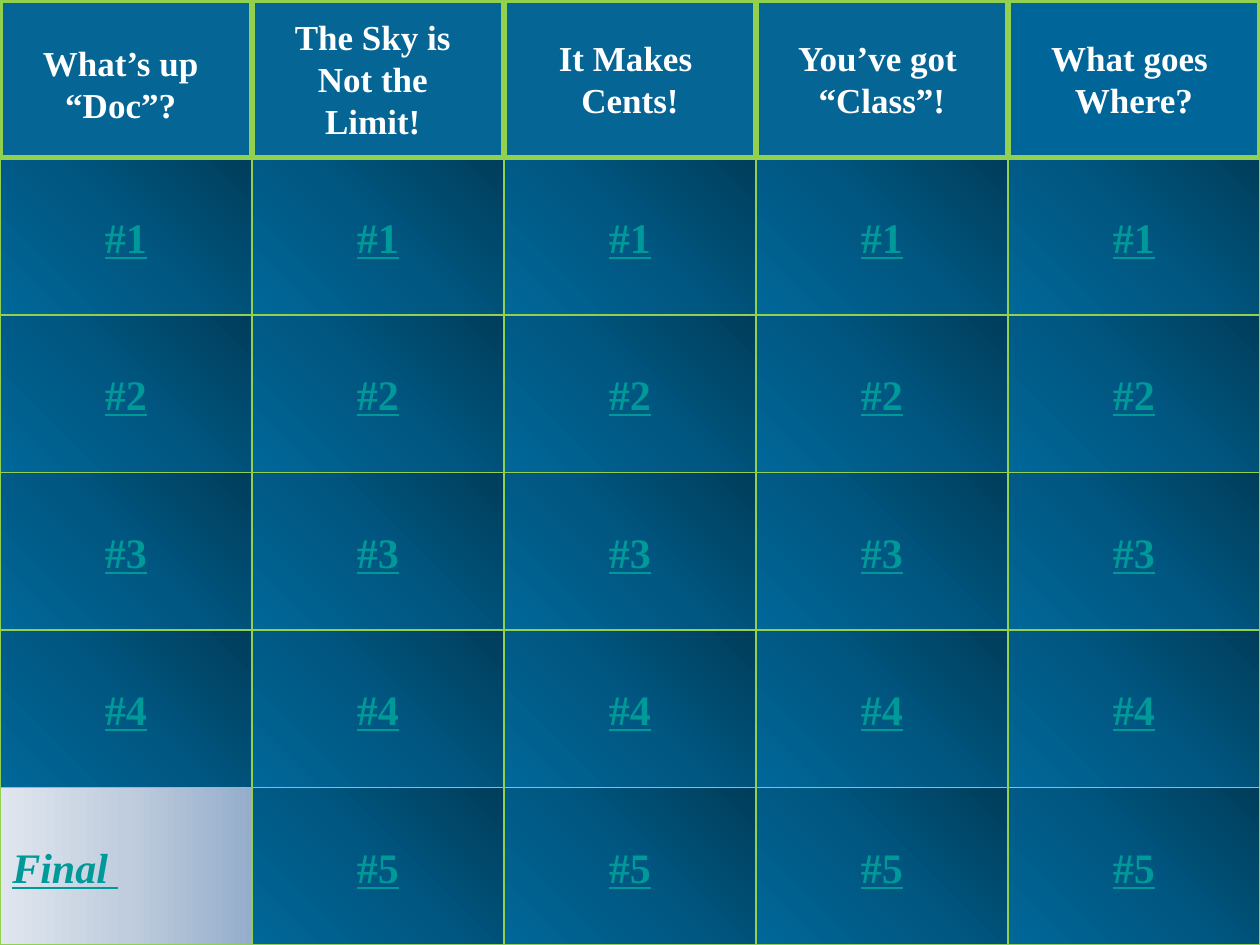
from copy import deepcopy
from dataclasses import dataclass

from pptx import Presentation
from pptx.dml.color import RGBColor
from pptx.enum.shapes import MSO_SHAPE
from pptx.enum.text import MSO_ANCHOR, MSO_AUTO_SIZE, PP_ALIGN
from pptx.oxml.ns import qn
from pptx.util import Pt


@dataclass(frozen=True)
class Theme:
    """Colours, font and sizes of the game board."""
    font: str = "Times New Roman"
    header_size: int = 20
    button_size: int = 24
    white: str = "FFFFFF"
    link: str = "009999"
    border: str = "92D050"
    header_fill: str = "056594"
    last_header_fill: str = "006699"
    button_stops: tuple = ("003D5B", "005781", "006799")
    final_stops: tuple = ("95ADCB", "C0CDDE", "E0E6EE")


THEME = Theme()
COLUMN_WIDTH, ROW_HEIGHT = 144, 90
COLUMNS, ROWS = 5, 5
HEADER_LINES = {2: ("It Makes ", "Cents!"), 3: ("You’ve got ", "“Class”!"), 4: ("What goes ", "Where?")}
HEADER_CAPTIONS = (("What’s up “Doc”?", (0, 20, 138, 55.5)), ("The Sky is Not the Limit!", (150, 5, 126, 80)))


def add_box(page, preset, box, border_width):
    """Add a bordered preset shape in the given box."""
    shape = page.shapes.add_shape(preset, *(Pt(length) for length in box))
    shape.shadow.inherit = False
    shape.line.color.rgb = RGBColor.from_string(THEME.border)
    shape.line.width = Pt(border_width)
    return shape


def fill_gradient(shape, colours, angle):
    """Fill a shape with three evenly spaced colours at a counter-clockwise angle."""
    shape.fill.gradient()
    shape.fill.gradient_angle = angle
    stop_list = next(shape._element.iter(qn("a:gsLst")))
    stop_list.insert(1, deepcopy(stop_list[0]))
    for index, (stop, colour) in enumerate(zip(shape.fill.gradient_stops, colours)):
        stop.position = index / 2
        stop.color.rgb = RGBColor.from_string(colour)


def write_lines(shape, lines, size, colour, align=PP_ALIGN.CENTER, wrap=False, underline=False, italic=False):
    """Write bold lines, one paragraph each, in the middle of a shape."""
    frame = shape.text_frame
    frame.word_wrap = wrap
    frame.vertical_anchor = MSO_ANCHOR.MIDDLE
    for index, line in enumerate(lines):
        para = frame.add_paragraph() if index else frame.paragraphs[0]
        para.alignment = align
        span = para.add_run()
        span.text = line
        span.font.name = THEME.font
        span.font.size = Pt(size)
        span.font.bold = True
        span.font.italic = italic
        span.font.underline = underline
        span.font.color.rgb = RGBColor.from_string(colour)


def add_button(page, box, label):
    """Add one numbered question button."""
    button = add_box(page, MSO_SHAPE.ACTION_BUTTON_CUSTOM, box, 0.75)
    fill_gradient(button, THEME.button_stops, 225)
    write_lines(button, [label], THEME.button_size, THEME.link, underline=True)


def add_final_button(page, box):
    """Add the pale button for the final question."""
    button = add_box(page, MSO_SHAPE.ACTION_BUTTON_CUSTOM, box, 0.75)
    fill_gradient(button, THEME.final_stops, 180)
    write_lines(button, ["Final "], THEME.button_size, THEME.link, PP_ALIGN.LEFT,
                wrap=True, underline=True, italic=True)


def add_question_grid(page, left, top):
    """Add the columns of question buttons from the given corner."""
    for column in range(COLUMNS):
        for row in range(ROWS):
            box = (left + column * COLUMN_WIDTH, top + row * ROW_HEIGHT, COLUMN_WIDTH, ROW_HEIGHT)
            if column == 0 and row == ROWS - 1:
                add_final_button(page, box)
            else:
                add_button(page, box, f"#{row + 1}")


def add_header_row(page, left, top):
    """Add the category panels and their captions from the given corner."""
    for column in range(COLUMNS):
        box = (left + column * COLUMN_WIDTH, top, COLUMN_WIDTH, ROW_HEIGHT)
        panel = add_box(page, MSO_SHAPE.RECTANGLE, box, 3)
        colour = THEME.last_header_fill if column == COLUMNS - 1 else THEME.header_fill
        panel.fill.solid()
        panel.fill.fore_color.rgb = RGBColor.from_string(colour)
        write_lines(panel, HEADER_LINES.get(column, ()), THEME.header_size, THEME.white)
    for caption, (offset_x, offset_y, width, height) in HEADER_CAPTIONS:
        text_box = page.shapes.add_textbox(Pt(left + offset_x), Pt(top + offset_y), Pt(width), Pt(height))
        write_lines(text_box, [caption], THEME.header_size, THEME.white, wrap=True)
        text_box.text_frame.auto_size = MSO_AUTO_SIZE.SHAPE_TO_FIT_TEXT


def main():
    """Build the game board and save it."""
    deck = Presentation()
    deck.slide_width, deck.slide_height = Pt(720), Pt(540)
    page = deck.slides.add_slide(deck.slide_layouts[6])
    add_question_grid(page, 0, ROW_HEIGHT)
    add_header_row(page, 0, 0)
    deck.save("out.pptx")


if __name__ == "__main__":
    main()
